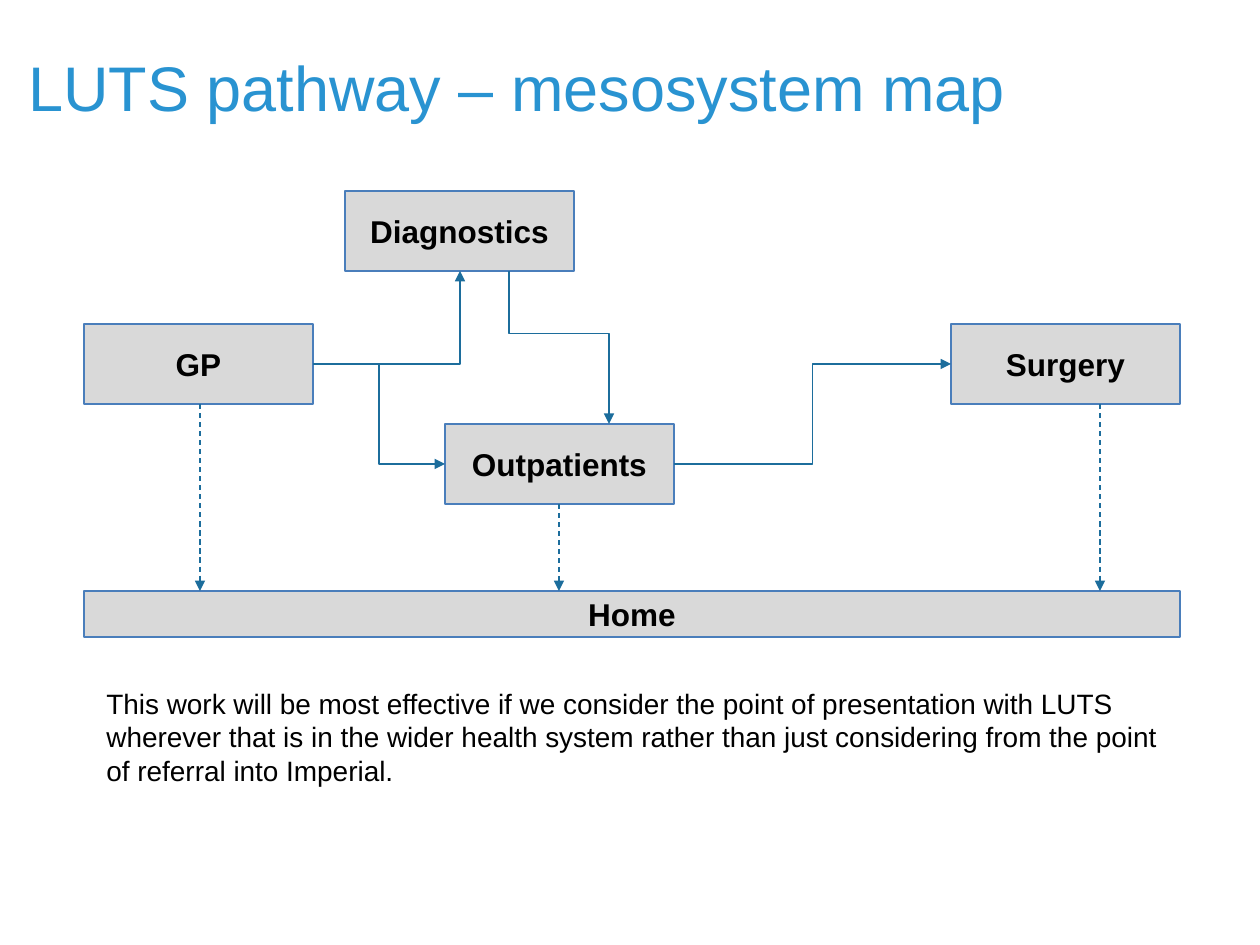
"""Build the LUTS pathway mesosystem map slide."""
from pptx import Presentation
from pptx.dml.color import RGBColor
from pptx.enum.dml import MSO_LINE
from pptx.enum.shapes import MSO_CONNECTOR, MSO_SHAPE
from pptx.enum.text import MSO_ANCHOR, PP_ALIGN
from pptx.oxml.ns import qn
from pptx.util import Emu, Pt
from lxml.etree import SubElement

COLORS = {"title": "2993D1", "text": "000000", "box": "D9D9D9",
          "border": "4A7EBB", "arrow": "1C6D9C"}
BOX_W, BOX_H = 229, 80


def px(n):
    return Emu(round(n * 914400 / 126))


def rgb(name):
    return RGBColor.from_string(COLORS[name])


class Map:
    font = "Arial"

    def __init__(self, s):
        self.s = s

    def label(self, sp, text, size, color="text", bold=False,
              anchor=MSO_ANCHOR.TOP, align=PP_ALIGN.LEFT):
        tf = sp.text_frame
        tf.word_wrap = True
        tf.vertical_anchor = anchor
        tf.text = text
        p = tf.paragraphs[0]
        p.alignment = align
        r = p.runs[0]
        r.font.name, r.font.size, r.font.bold = self.font, Pt(size), bold
        r.font.color.rgb = rgb(color)

    def text(self, x, y, w, h, text, size, **style):
        sp = self.s.shapes.add_textbox(px(x), px(y), px(w), px(h))
        self.label(sp, text, size, **style)

    def box(self, x, y, text, w=BOX_W, h=BOX_H):
        sp = self.s.shapes.add_shape(MSO_SHAPE.RECTANGLE, px(x), px(y), px(w), px(h))
        sp.shadow.inherit = False
        sp.fill.solid()
        sp.fill.fore_color.rgb = rgb("box")
        sp.line.color.rgb = rgb("border")
        sp.line.width = Pt(1)
        self.label(sp, text, 18, bold=True, anchor=MSO_ANCHOR.MIDDLE,
                   align=PP_ALIGN.CENTER)

    def arrow(self, x1, y1, x2, y2, kind=MSO_CONNECTOR.ELBOW, dashed=False, end="tailEnd"):
        c = self.s.shapes.add_connector(kind, px(x1), px(y1), px(x2), px(y2))
        c.line.color.rgb = rgb("arrow")
        c.line.width = Pt(0.75)
        if dashed:
            c.line.dash_style = MSO_LINE.DASH
        pr = c._element.spPr
        SubElement(pr.find(qn("a:ln")), qn("a:" + end), type="triangle")
        SubElement(pr, qn("a:effectLst"))
        return pr

    def corner(self, x1, y1, x2, y2):
        geom = self.arrow(x1, y1, x2, y2).find(qn("a:prstGeom"))
        geom.set("prst", "bentConnector2")

    def vertical_elbow(self, x1, y1, x2, y2, bend):
        cx, cy = (x1 + x2) / 2, (y1 + y2) / 2
        half_w, half_h = (y2 - y1) / 2, (x2 - x1) / 2
        pr = self.arrow(cx - half_w, cy + half_h, cx + half_w, cy - half_h, end="headEnd")
        pr.find(qn("a:xfrm")).set("rot", str(270 * 60000))
        guides = pr.find(qn("a:prstGeom")).find(qn("a:avLst"))
        SubElement(guides, qn("a:gd"), name="adj1", fmla=f"val {round(bend * 100000)}")


def main():
    prs = Presentation()
    prs.slide_width, prs.slide_height = px(1260), px(945)
    m = Map(prs.slides.add_slide(prs.slide_layouts[6]))

    m.text(16, 38, 1181, 97, "LUTS pathway – mesosystem map", 36,
           color="title", anchor=MSO_ANCHOR.MIDDLE)

    for x, y, name in [(84, 324, "GP"), (445, 424, "Outpatients"),
                       (951, 324, "Surgery"), (345, 191, "Diagnostics")]:
        m.box(x, y, name)

    m.arrow(313, 364, 445, 464)
    m.corner(313, 364, 460, 271)
    m.arrow(674, 464, 951, 364)
    m.vertical_elbow(509, 271, 609, 424, bend=0.59)

    m.box(84, 591, "Home", w=1096, h=46)
    for x, y in [(1100, 404), (559, 504), (200, 404)]:
        m.arrow(x, y, x, 591, kind=MSO_CONNECTOR.STRAIGHT, dashed=True)

    m.text(94, 680, 1101, 89,
           "This work will be most effective if we consider the point of presentation "
           "with LUTS wherever that is in the wider health system rather than just "
           "considering from the point of referral into Imperial.", 16)
    prs.save("out.pptx")


if __name__ == "__main__":
    main()
